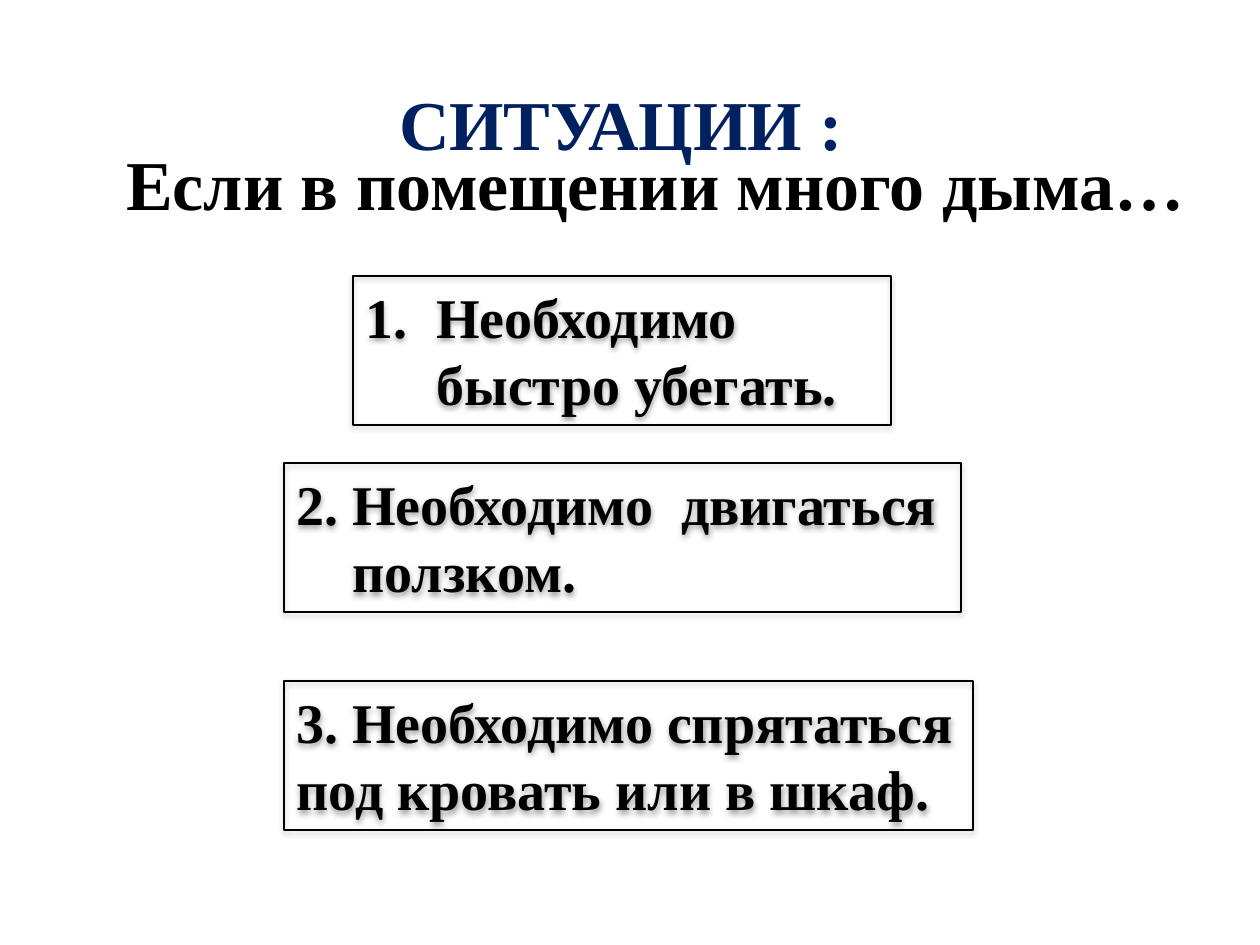
import pptx
import pptx.dml.color
import pptx.enum.shapes
import pptx.enum.text
import pptx.oxml
import pptx.oxml.ns
import pptx.util

EMU_PER_PX = 914400 / 126
FONT = "Times New Roman"
COLORS = {"title": "002060", "text": "000000", "line": "000000", "shadow": "000000"}
BOX_HEIGHT = 149


def px(length):
    return pptx.util.Emu(round(length * EMU_PER_PX))


def rgb(name):
    return pptx.dml.color.RGBColor.from_string(COLORS[name])


def write_text(paragraph, text, size=32, color="text", align="LEFT",
               margin=0, indent=0, numbered=False):
    paragraph.alignment = getattr(pptx.enum.text.PP_ALIGN, align)
    properties = paragraph._p.get_or_add_pPr()
    properties.set("marL", str(px(margin)))
    properties.set("indent", str(px(indent)))
    if numbered:
        number = pptx.oxml.parse_xml(
            f'<a:buAutoNum {pptx.oxml.ns.nsdecls("a")} type="arabicPeriod"/>')
        properties.append(number)
    run = paragraph.add_run()
    run.text = text
    run.font.name = FONT
    run.font.size = pptx.util.Pt(size)
    run.font.bold = True
    run.font.color.rgb = rgb(color)


def add_heading(slide, text, left, top, width, height, **text_format):
    box = slide.shapes.add_textbox(px(left), px(top), px(width), px(height))
    box.text_frame.word_wrap = False
    write_text(box.text_frame.paragraphs[0], text, size=40, **text_format)


def add_soft_shadow(shape):
    shape.shadow.inherit = False
    effects = shape._element.spPr.find(pptx.oxml.ns.qn("a:effectLst"))
    effects.append(pptx.oxml.parse_xml(
        f'<a:outerShdw {pptx.oxml.ns.nsdecls("a")} blurRad="{pptx.util.Pt(3.1)}"'
        f' dist="{pptx.util.Pt(1.6)}" dir="5400000" rotWithShape="0">'
        f'<a:srgbClr val="{COLORS["shadow"]}"><a:alpha val="38000"/></a:srgbClr>'
        '</a:outerShdw>'))


def add_answer(slide, left, top, width, lines):
    """Add an outlined box; each line is its text and its paragraph format."""
    shape = slide.shapes.add_shape(
        pptx.enum.shapes.MSO_SHAPE.RECTANGLE,
        px(left), px(top), px(width), px(BOX_HEIGHT))
    shape.fill.background()
    shape.line.color.rgb = rgb("line")
    shape.line.width = pptx.util.Pt(0.75)
    add_soft_shadow(shape)
    frame = shape.text_frame
    frame.word_wrap = True
    frame.auto_size = pptx.enum.text.MSO_AUTO_SIZE.SHAPE_TO_FIT_TEXT
    frame.vertical_anchor = pptx.enum.text.MSO_ANCHOR.TOP
    for index, (text, text_format) in enumerate(lines):
        paragraph = frame.add_paragraph() if index else frame.paragraphs[0]
        write_text(paragraph, text, **text_format)


def main():
    presentation = pptx.Presentation()
    presentation.slide_width = px(1260)
    presentation.slide_height = px(945)
    slide = presentation.slides.add_slide(presentation.slide_layouts[6])

    add_heading(slide, "СИТУАЦИИ :", 384, 74, 474, 93, color="title", align="CENTER")
    add_heading(slide, "Если в помещении много дыма…", 114, 134, 1095, 97)

    add_answer(slide, 353, 276, 538, [
        ("Необходимо  быстро убегать.", dict(margin=71, indent=-71, numbered=True))])
    add_answer(slide, 284, 463, 677, [
        ("2. Необходимо  двигаться", {}), ("ползком.", dict(margin=56))])
    add_answer(slide, 284, 681, 689, [
        ("3. Необходимо спрятаться", {}), ("под кровать или в шкаф.", {})])

    presentation.save("out.pptx")


if __name__ == "__main__":
    main()
